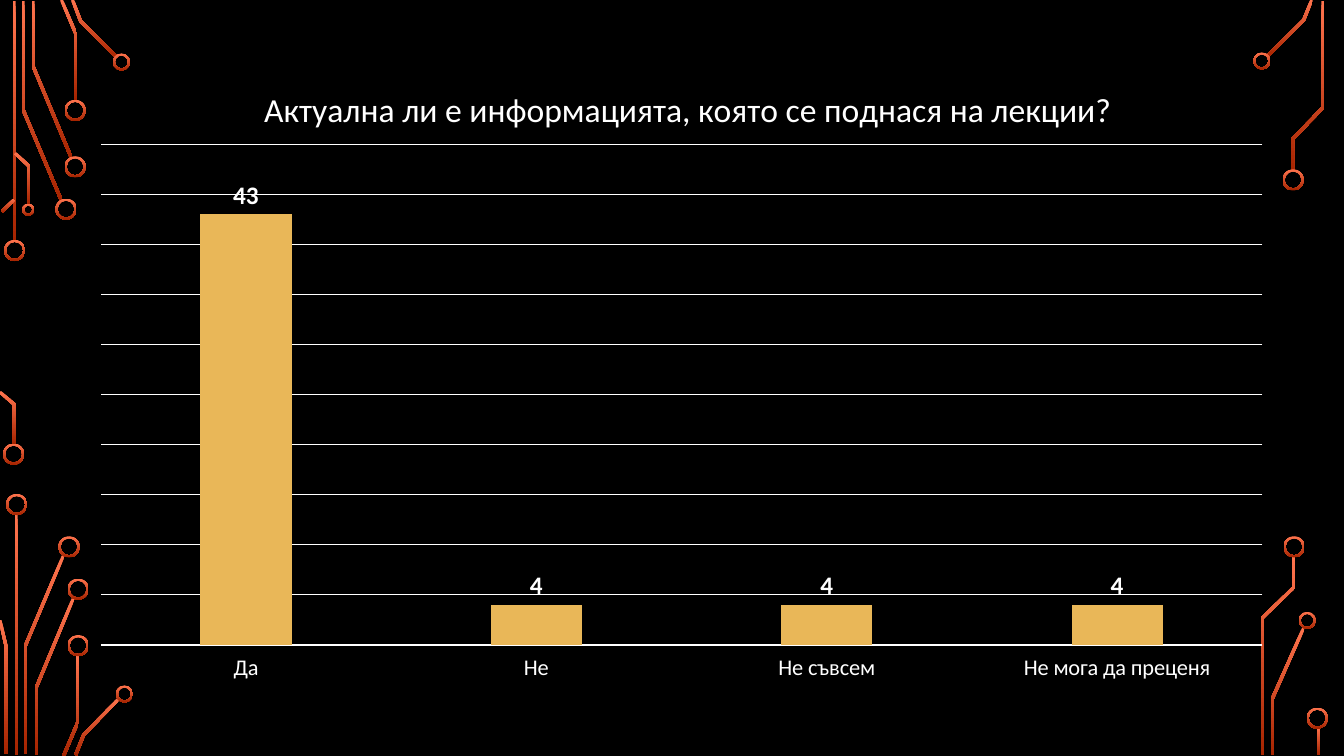
import math

from lxml import etree
from pptx import Presentation
from pptx.chart.data import CategoryChartData
from pptx.dml.color import RGBColor
from pptx.enum.chart import XL_CHART_TYPE, XL_LABEL_POSITION, XL_TICK_LABEL_POSITION, XL_TICK_MARK
from pptx.enum.shapes import MSO_SHAPE
from pptx.oxml.ns import qn
from pptx.util import Emu, Pt

COLUMNS = XL_CHART_TYPE.COLUMN_CLUSTERED
OUTSIDE_END = XL_LABEL_POSITION.OUTSIDE_END
LABELS_LOW = XL_TICK_LABEL_POSITION.LOW
NO_TICKS = XL_TICK_MARK.NONE
DONUT = MSO_SHAPE.DONUT

EMU_PER_PX = 9144  # 100 px to the inch
SLIDE_WIDTH, SLIDE_HEIGHT = 1333, 750
FONT = "Calibri"
BLACK = RGBColor(0x00, 0x00, 0x00)
WHITE = RGBColor(0xFF, 0xFF, 0xFF)
GOLD = RGBColor(0xE9, 0xB7, 0x58)
CORAL = RGBColor(0xFF, 0x74, 0x4E)
RUST = RGBColor(0xA6, 0x24, 0x00)

TRACE_WIDTH = 3
RING_THICKNESS = 2

QUESTION = "Актуална ли е информацията, която се поднася на лекции?"
ANSWERS = {"Да": 43, "Не": 4, "Не съвсем": 4, "Не мога да преценя": 4}

# Centre lines of the circuit traces
TRACES = [
    # top left
    [(14, 1), (14, 240)],
    [(23, 1), (23, 109), (61, 199)],
    [(33, 1), (33, 66), (71, 157)],
    [(61, 0), (75, 33), (75, 100)],
    [(72, 0), (80, 21), (116, 57)],
    [(2, 210), (14, 198)],
    [(0, 389), (14, 401), (14, 441)],
    [(15, 152), (29, 165), (29, 203)],
    # bottom left
    [(16, 510), (16, 749)],
    [(63, 551), (25, 641), (25, 748)],
    [(0, 615), (6, 641), (6, 748)],
    [(73, 593), (36, 682), (36, 749)],
    [(77, 650), (77, 717), (63, 750)],
    [(118, 693), (83, 729), (75, 749)],
    # right
    [(1301, 0), (1293, 20), (1257, 56)],
    [(1312, 1), (1312, 107), (1282, 138), (1282, 169)],
    [(1293, 623), (1262, 693), (1262, 749)],
    [(1283, 552), (1283, 583), (1252, 613), (1252, 749)],
    [(1308, 721), (1308, 749)],
]

# Left and top of the rings, by diameter
RINGS = {
    21: [(4, 238), (3, 440), (55, 197), (64, 155), (64, 99), (6, 490), (58, 532),
         (67, 574), (67, 630), (1272, 168), (1273, 532), (1296, 702)],
    17: [(112, 53), (115, 680), (1243, 52), (1288, 607)],
    12: [(22, 202)],
}


def px(length):
    return Emu(round(length * EMU_PER_PX))


def paint_copper(shape):
    shape.shadow.inherit = False
    shape.line.fill.background()
    shape.fill.gradient()
    shape.fill.gradient_angle = 270
    for stop, color in zip(shape.fill.gradient_stops, (CORAL, RUST)):
        stop.color.rgb = color


def ribbon_side(points, half_width):
    """Shift a polyline sideways, with mitred corners."""
    normals = []
    for (x1, y1), (x2, y2) in zip(points, points[1:]):
        length = math.hypot(x2 - x1, y2 - y1)
        normals.append(((y1 - y2) / length, (x2 - x1) / length))
    befores = normals[:1] + normals
    afters = normals + normals[-1:]
    side = []
    for (x, y), (ax, ay), (bx, by) in zip(points, befores, afters):
        miter = half_width / (1 + ax * bx + ay * by)
        side.append((px(x + (ax + bx) * miter), px(y + (ay + by) * miter)))
    return side


def add_trace(slide, points):
    half_width = TRACE_WIDTH / 2
    outline = ribbon_side(points, half_width) + ribbon_side(points, -half_width)[::-1]
    builder = slide.shapes.build_freeform(*outline[0])
    builder.add_line_segments(outline[1:], close=True)
    paint_copper(builder.convert_to_shape())


def add_ring(slide, left, top, diameter):
    ring = slide.shapes.add_shape(DONUT, px(left), px(top), px(diameter), px(diameter))
    ring.adjustments[0] = RING_THICKNESS / diameter
    paint_copper(ring)


def format_font(font, size, bold=False):
    font.name = FONT
    font.size = Pt(size)
    font.bold = bold
    font.color.rgb = WHITE


def format_line(line):
    line.color.rgb = WHITE
    line.width = Pt(0.75)


def set_layout(parent, index, **settings):
    """Give a chart part a fixed place, in fractions of the chart."""
    for automatic in parent.findall(qn("c:layout")):
        parent.remove(automatic)
    layout = etree.Element(qn("c:layout"))
    manual = etree.SubElement(layout, qn("c:manualLayout"))
    for tag, value in settings.items():
        etree.SubElement(manual, qn(f"c:{tag}")).set("val", str(value))
    parent.insert(index, layout)


def add_answer_chart(slide):
    chart_data = CategoryChartData()
    chart_data.categories = ANSWERS.keys()
    chart_data.add_series("Series 1", ANSWERS.values())
    chart = slide.shapes.add_chart(COLUMNS, px(76), px(55), px(1200), px(629), chart_data).chart
    format_font(chart.font, 10)
    chart.has_legend = False

    title = chart.chart_title
    title.text_frame.text = QUESTION
    format_font(title.text_frame.paragraphs[0].runs[0].font, 24)
    set_layout(title._element, 1, xMode="edge", yMode="edge", x=0.15, y=0.04)

    answer_axis = chart.category_axis
    answer_axis.major_tick_mark = NO_TICKS
    answer_axis.tick_label_position = LABELS_LOW
    format_font(answer_axis.tick_labels.font, 16)
    format_line(answer_axis.format.line)

    count_axis = chart.value_axis
    count_axis.visible = False
    count_axis.minimum_scale = 0
    count_axis.maximum_scale = 50
    count_axis.major_unit = 5
    format_line(count_axis.major_gridlines.format.line)

    plot = chart.plots[0]
    plot.gap_width = 219
    plot.overlap = -27
    plot.vary_by_categories = False
    set_layout(plot._element.getparent(), 0, layoutTarget="inner", xMode="edge", yMode="edge",
               x=0.02, y=0.14, w=0.96, h=0.79)

    answers = plot.series[0]
    answers.format.fill.solid()
    answers.format.fill.fore_color.rgb = GOLD
    counts = answers.data_labels
    counts.show_value = True
    counts.position = OUTSIDE_END
    format_font(counts.font, 18, bold=True)


def main():
    presentation = Presentation()
    presentation.slide_width = px(SLIDE_WIDTH)
    presentation.slide_height = px(SLIDE_HEIGHT)
    slide = presentation.slides.add_slide(presentation.slide_layouts[6])
    slide.background.fill.solid()
    slide.background.fill.fore_color.rgb = BLACK

    for points in TRACES:
        add_trace(slide, points)
    for diameter, corners in RINGS.items():
        for left, top in corners:
            add_ring(slide, left, top, diameter)
    add_answer_chart(slide)
    presentation.save("out.pptx")


if __name__ == "__main__":
    main()
